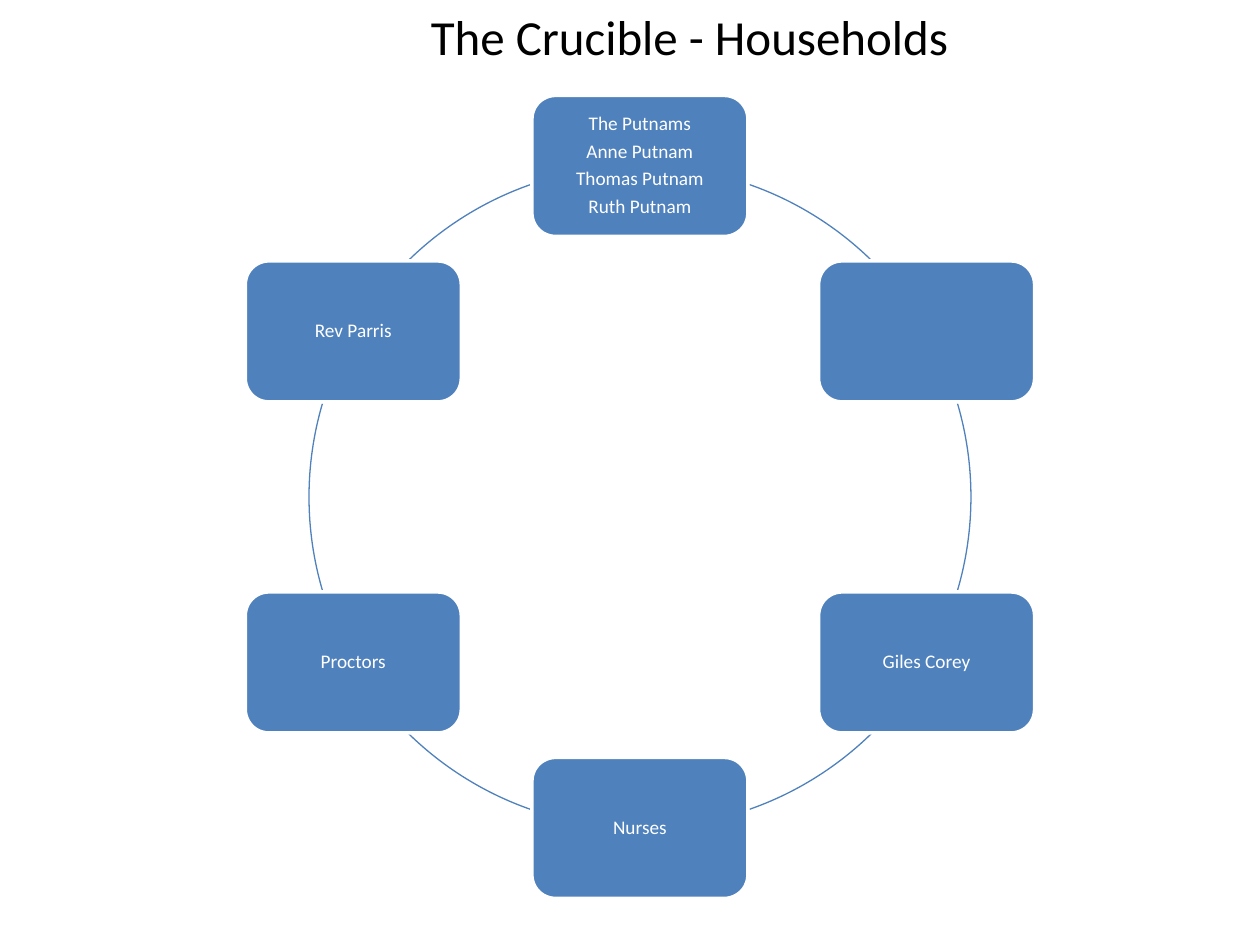
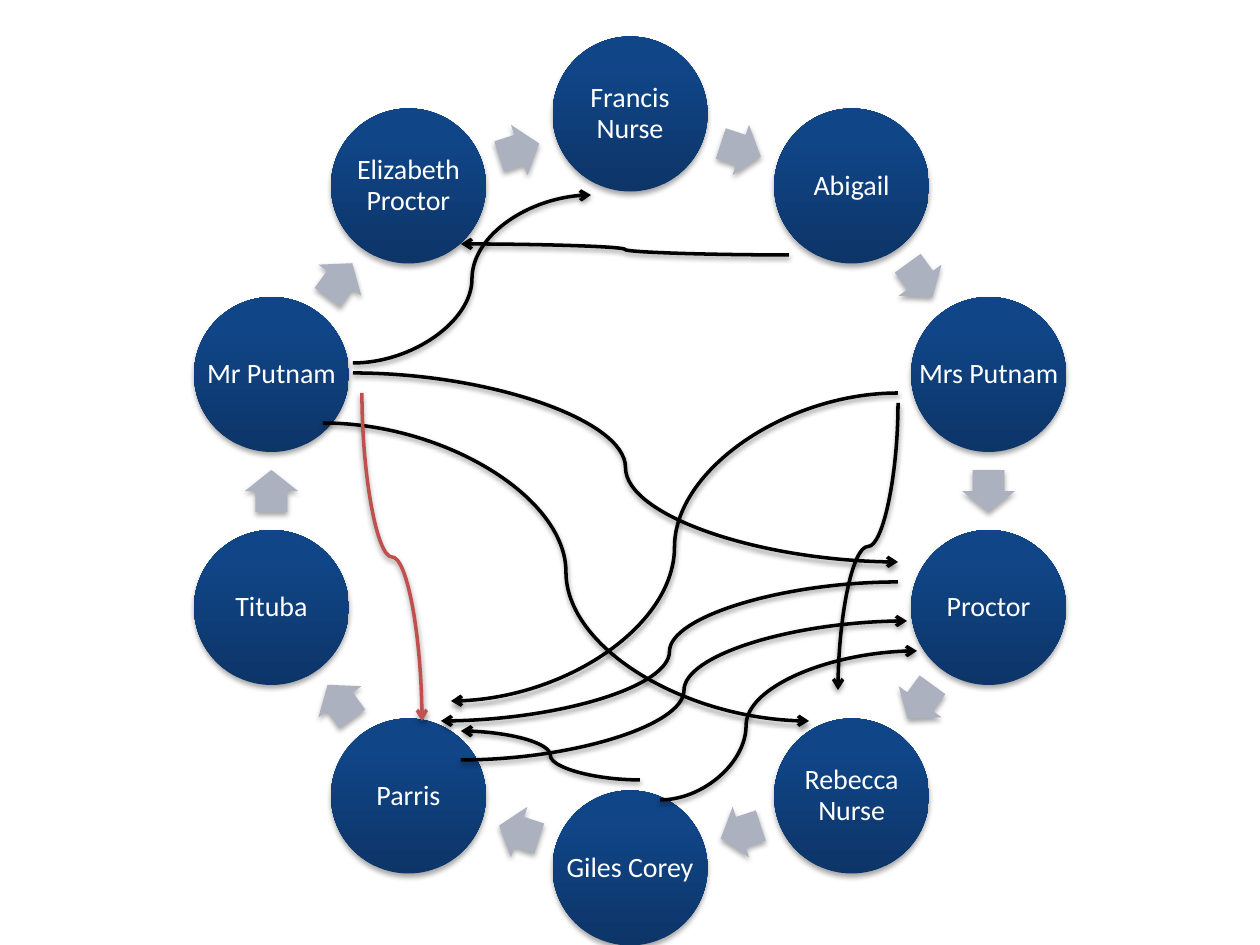
import math

import lxml.etree
import pptx
import pptx.dml.color
import pptx.enum.shapes
import pptx.enum.text
import pptx.oxml.ns
import pptx.util

SHAPE = pptx.enum.shapes.MSO_SHAPE
qn = pptx.oxml.ns.qn

PX = 914400 / 126
FONT = "Calibri"
WHITE, BLACK, RED = "FFFFFF", "000000", "C0504D"
BLUE, GREY = "4F81BD", "ACB1BF"
NAVY_STOPS = [(0, "0D3568"), (80, "104587"), (100, "0E458A")]

HOUSEHOLDS = [
    ["The Putnams", "Anne Putnam", "Thomas Putnam", "Ruth Putnam"],
    [], ["Giles Corey"], ["Nurses"], ["Proctors"], ["Rev Parris"],
]
RIGHT_ARCS = [(-70.7, -45.6), (-16.4, 16.4), (45.6, 70.7)]

CHARACTERS = [
    "Francis Nurse", "Abigail", "Mrs Putnam", "Proctor", "Rebecca Nurse",
    "Giles Corey", "Parris", "Tituba", "Mr Putnam", "Elizabeth Proctor",
]
ACCUSATIONS = [
    ((323, 423), (809, 721), {}),
    ((362, 393), (422, 721), {"color": RED, "vertical": True}),
    ((898, 393), (451, 701), {}),
    ((789, 255), (461, 244), {}),
    ((640, 780), (461, 731), {}),
    ((898, 582), (441, 721), {}),
    ((353, 373), (898, 562), {}),
    ((898, 403), (838, 690), {"vertical": True}),
    ((353, 363), (591, 195), {}),
    ((461, 760), (907, 621), {}),
    ((660, 800), (917, 651), {"bend": 0.335}),
]


def px(*lengths):
    return [pptx.util.Emu(round(n * PX)) for n in lengths]


def rgb(color):
    return pptx.dml.color.RGBColor.from_string(color)


def add_xml(parent, tag, **attrs):
    return lxml.etree.SubElement(parent, qn(tag), {k: str(v) for k, v in attrs.items()})


def add_shadow(effects, alpha, distance):
    shadow = add_xml(effects, "a:outerShdw", blurRad=pptx.util.Pt(3.1),
                     dist=pptx.util.Pt(distance), dir=90 * 60000, rotWithShape=0)
    color = add_xml(shadow, "a:srgbClr", val=BLACK)
    add_xml(color, "a:alpha", val=alpha * 1000)


def add_preset(slide, kind, box, fill=None, line=None, width=0, shadow=False):
    s = slide.shapes.add_shape(kind, *px(*box))
    if fill:
        s.fill.solid()
        s.fill.fore_color.rgb = rgb(fill)
    else:
        s.fill.background()
    if line:
        s.line.color.rgb = rgb(line)
        s.line.width = pptx.util.Pt(width)
    else:
        s.line.fill.background()
    s.shadow.inherit = False
    if shadow:
        add_shadow(s._element.spPr.find(qn("a:effectLst")), 35, 1.8)
    return s


def write(s, lines, size, color, inset=None, spaced=True):
    tf = s.text_frame
    tf.word_wrap = True
    if inset is not None:
        tf.margin_left, tf.margin_top, tf.margin_right, tf.margin_bottom = px(*[inset] * 4)
        tf.vertical_anchor = pptx.enum.text.MSO_ANCHOR.MIDDLE
    for i, line in enumerate(lines):
        p = tf.add_paragraph() if i else tf.paragraphs[0]
        p.alignment = pptx.enum.text.PP_ALIGN.CENTER
        if spaced:
            p.line_spacing = 0.9
            p.space_after = pptx.util.Pt(0.35 * size)
        r = p.add_run()
        r.text = line
        r.font.name = FONT
        r.font.size = pptx.util.Pt(size)
        r.font.color.rgb = rgb(color)


def ring_point(center, radius, degrees):
    a = math.radians(degrees)
    return center[0] + radius * math.cos(a), center[1] + radius * math.sin(a)


def centered(point, w, h):
    return point[0] - w / 2, point[1] - h / 2, w, h


def title(slide, box, text):
    s = slide.shapes.add_textbox(*px(*box))
    write(s, [text], 28, BLACK, spaced=False)
    s.text_frame.auto_size = pptx.enum.text.MSO_AUTO_SIZE.SHAPE_TO_FIT_TEXT


def household_ring(slide, box):
    x, y, w, h = box
    center = x + w / 2, y + h / 2
    left_arcs = [(180 - end, 180 - start) for start, end in RIGHT_ARCS]
    for arc in RIGHT_ARCS + left_arcs:
        s = add_preset(slide, SHAPE.ARC, box, line=BLUE, width=0.75)
        for i, angle in enumerate(arc):
            s.adjustments[i] = angle % 360 * 0.6
    for i, names in enumerate(HOUSEHOLDS):
        point = ring_point(center, w / 2, -90 + 60 * i)
        s = add_preset(slide, SHAPE.ROUNDED_RECTANGLE, centered(point, 216, 141),
                       BLUE, WHITE, 2)
        write(s, names, 11, WHITE, inset=6)


def character(slide, box, name):
    s = add_preset(slide, SHAPE.OVAL, box, shadow=True)
    s.fill.gradient()
    s.fill.gradient_angle = 90
    stops = s._element.spPr.find(qn("a:gradFill")).find(qn("a:gsLst"))
    stops.clear()
    for position, color in NAVY_STOPS:
        add_xml(add_xml(stops, "a:gs", pos=position * 1000), "a:srgbClr", val=color)
    write(slide.shapes.add_textbox(*px(*box)), [name], 16, WHITE, inset=3)


def character_ring(slide, box):
    x, y, w, h = box
    center = x + w / 2, y + h / 2
    step = 360 / len(CHARACTERS)
    chord_radius = w / 2 * math.cos(math.radians(step / 2))
    for i, name in enumerate(CHARACTERS):
        angle = -90 + step * i
        character(slide, centered(ring_point(center, w / 2, angle), 155, 155), name)
        point = ring_point(center, chord_radius, angle + step / 2)
        s = add_preset(slide, SHAPE.RIGHT_ARROW, centered(point, 42, 53), GREY, shadow=True)
        s.adjustments[0], s.adjustments[1] = 0.6, 0.5
        s.rotation = (angle + step / 2 + 90) % 360


def accusation(slide, start, end, color=BLACK, vertical=False, bend=0.5):
    if vertical:
        cx, cy = (start[0] + end[0]) / 2, (start[1] + end[1]) / 2
        dx, dy = (end[0] - start[0]) / 2, (end[1] - start[1]) / 2
        start, end = (cx - dy, cy + dx), (cx + dy, cy - dx)
    s = slide.shapes.add_connector(pptx.enum.shapes.MSO_CONNECTOR.CURVE, *px(*start, *end))
    s.line.color.rgb = rgb(color)
    s.line.width = pptx.util.Pt(2)
    spPr = s._element.spPr
    if vertical:
        spPr.find(qn("a:xfrm")).set("rot", str(90 * 60000))
    guides = spPr.find(qn("a:prstGeom")).find(qn("a:avLst"))
    add_xml(guides, "a:gd", name="adj1", fmla=f"val {round(bend * 100000)}")
    add_xml(spPr.find(qn("a:ln")), "a:tailEnd", type="arrow")
    add_shadow(add_xml(spPr, "a:effectLst"), 38, 1.6)


def main():
    prs = pptx.Presentation()
    prs.slide_width, prs.slide_height = px(1260, 945)
    blank = prs.slide_layouts[6]

    households = prs.slides.add_slide(blank)
    household_ring(households, (309, 166, 662, 662))
    title(households, (273, 0, 833, 72), "The Crucible - Households")

    accusations = prs.slides.add_slide(blank)
    character_ring(accusations, (253, 114, 754, 754))
    for start, end, style in ACCUSATIONS:
        accusation(accusations, start, end, **style)

    prs.save("out.pptx")


if __name__ == "__main__":
    main()
